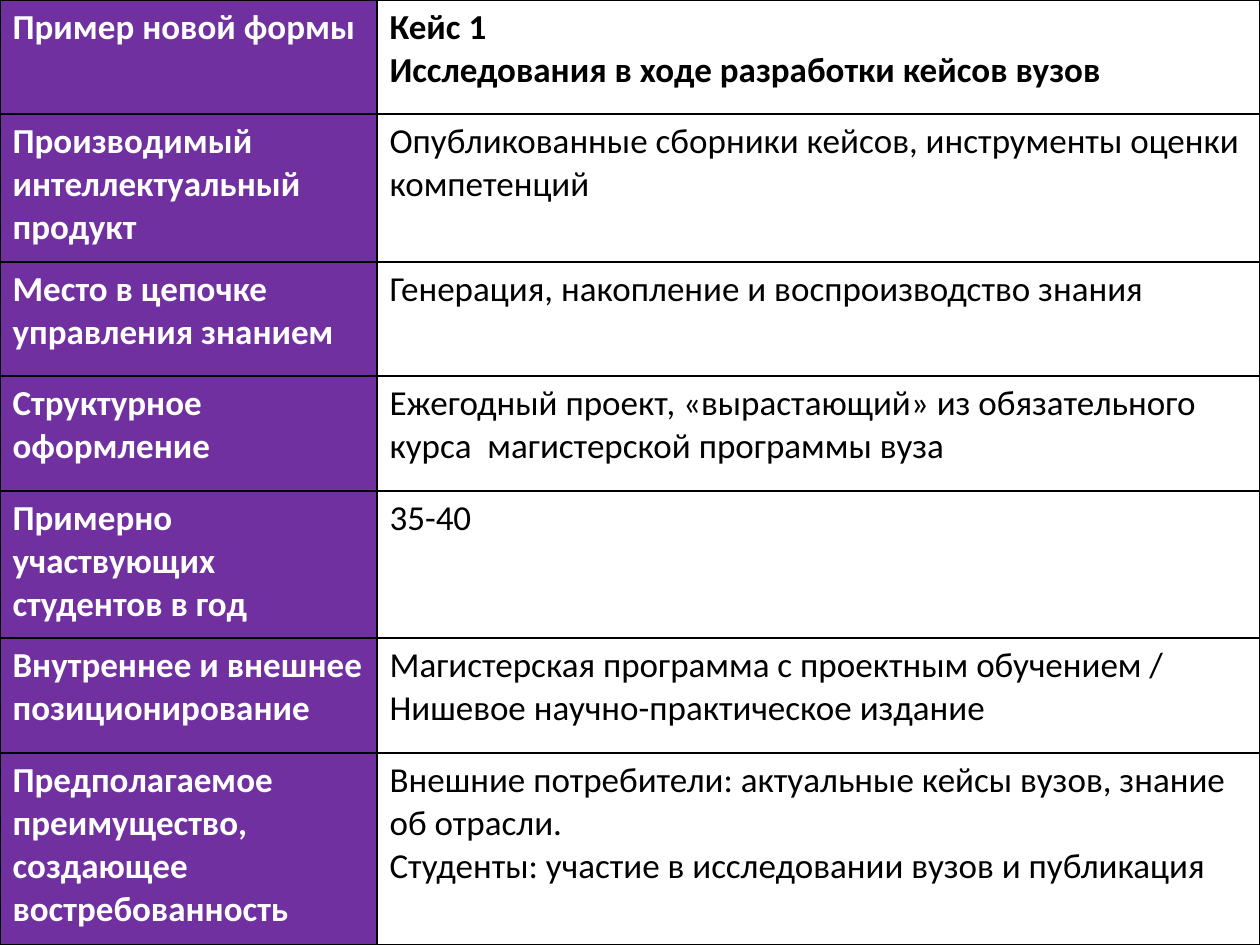
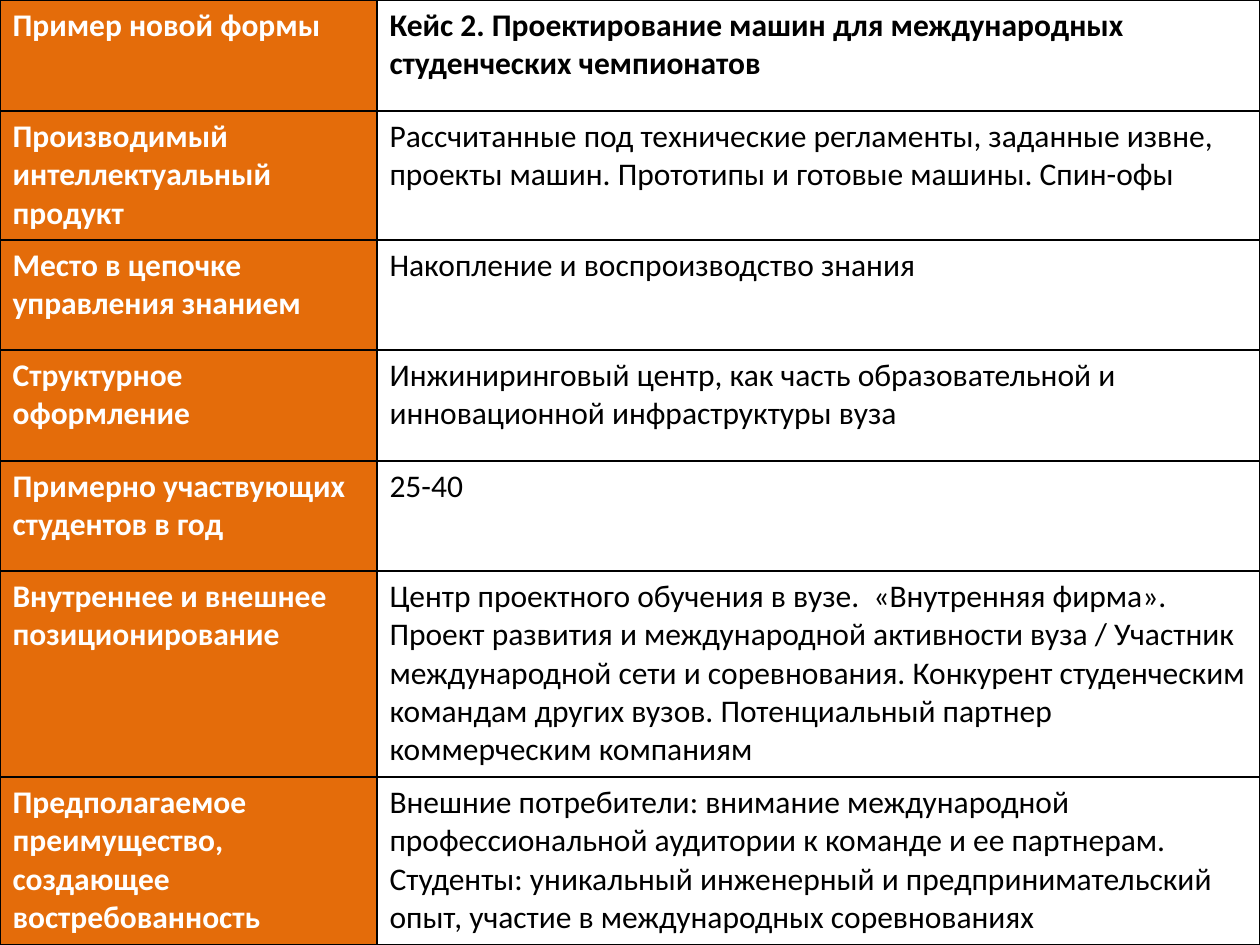
from dataclasses import dataclass
from lxml.etree import SubElement as Sub
from pptx import Presentation
from pptx.dml.color import RGBColor as RGB
from pptx.oxml.ns import qn
from pptx.util import Emu, Pt


@dataclass(frozen=True)
class Theme:
    font: str = "Calibri"
    dark: str = "000000"
    light: str = "FFFFFF"
    violet: str = "7030A0"
    orange: str = "E46C0A"
    large: int = 20
    small: int = 18
    rule: int = 1


theme = Theme()
SCALE = 914400 / 126  # EMU in one px
WIDE, HIGH = 1260, 945
COLS = [377, 883]
BLANK = 6


def px(n):
    return Emu(round(n * SCALE))


def style(cell, text, size, ink, fill, bold):
    # Borders go into the cell before its fill
    props = cell._tc.get_or_add_tcPr()
    for side in ("lnL", "lnR", "lnT", "lnB"):
        line = Sub(props, qn("a:" + side), w=str(Pt(theme.rule)))
        Sub(Sub(line, qn("a:solidFill")), qn("a:srgbClr"), val=theme.dark)
    cell.fill.solid()
    cell.fill.fore_color.rgb = RGB.from_string(fill)
    cell.text_frame.text = text
    for para in cell.text_frame.paragraphs:
        font = para.font
        font.name, font.size, font.bold = theme.font, Pt(size), bold
        font.color.rgb = RGB.from_string(ink)


# Row labels shared by both cases
labels = [
    "Пример новой формы",
    "Производимый интеллектуальный продукт",
    "Место в цепочке управления знанием",
    "Структурное оформление",
    "Примерно участвующих студентов в год",
    "Внутреннее и внешнее позиционирование",
    "Предполагаемое преимущество, создающее востребованность",
]

# Each case: label fill, type size, row heights, answers
cases = [
    (theme.violet, theme.large, [114, 148, 114, 115, 147, 115, 192], [
        "Кейс 1\nИсследования в ходе разработки кейсов вузов",
        "Опубликованные сборники кейсов, инструменты оценки компетенций",
        "Генерация, накопление и воспроизводство знания",
        "Ежегодный проект, «вырастающий» из обязательного курса  "
        "магистерской программы вуза",
        "35-40",
        "Магистерская программа с проектным обучением / "
        "Нишевое научно-практическое издание",
        "Внешние потребители: актуальные кейсы вузов, знание об отрасли.\n"
        "Студенты: участие в исследовании вузов и публикация",
    ]),
    (theme.orange, theme.small, [111, 129, 110, 111, 110, 206, 168], [
        "Кейс 2. Проектирование машин для международных "
        "студенческих чемпионатов",
        "Рассчитанные под технические регламенты, заданные извне, "
        "проекты машин. Прототипы и готовые машины. Спин-офы",
        "Накопление и воспроизводство знания",
        "Инжиниринговый центр, как часть образовательной и "
        "инновационной инфраструктуры вуза",
        "25-40",
        "Центр проектного обучения в вузе.  «Внутренняя фирма». "
        "Проект развития и международной активности вуза / Участник "
        "международной сети и соревнования. Конкурент студенческим "
        "командам других вузов. Потенциальный партнер "
        "коммерческим компаниям",
        "Внешние потребители: внимание международной профессиональной "
        "аудитории к команде и ее партнерам.\n"
        "Студенты: уникальный инженерный и предпринимательский опыт, "
        "участие в международных соревнованиях",
    ]),
]

deck = Presentation()
deck.slide_width, deck.slide_height = px(WIDE), px(HIGH)

# One full-slide table for each case
for tint, size, rows, answers in cases:
    slide = deck.slides.add_slide(deck.slide_layouts[BLANK])
    table = slide.shapes.add_table(
        len(rows), len(COLS), 0, 0, px(WIDE), px(HIGH)).table
    table.first_row = table.horz_banding = False
    for col, width in zip(table.columns, COLS):
        col.width = px(width)
    for i, (label, answer) in enumerate(zip(labels, answers)):
        table.rows[i].height = px(rows[i])
        style(table.cell(i, 0), label, size, theme.light, tint, True)
        style(table.cell(i, 1), answer, size, theme.dark, theme.light, i == 0)

deck.save("out.pptx")
